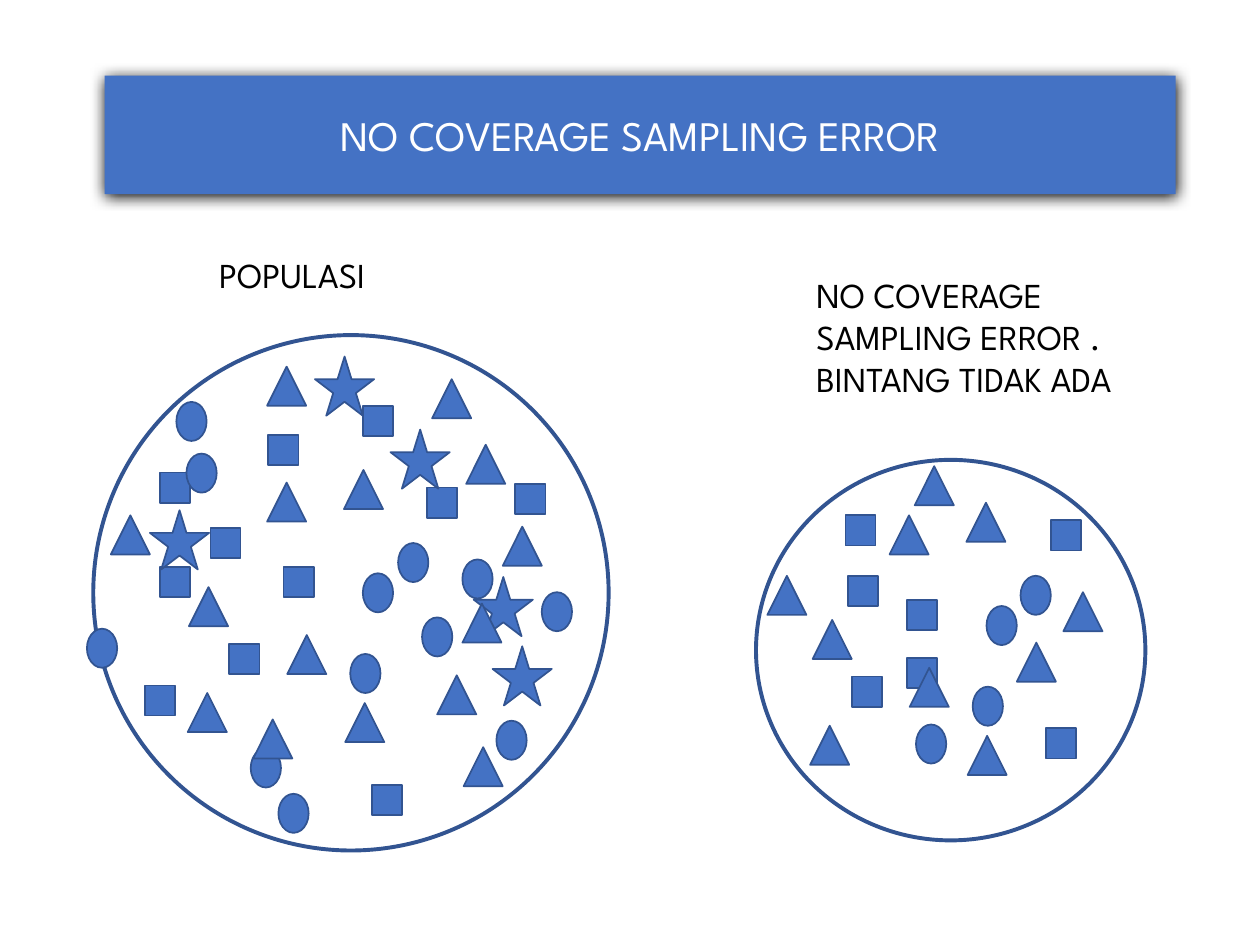
import pptx
import pptx.util
import pptx.dml.color
import pptx.enum.shapes
import pptx.enum.text
import pptx.oxml
import pptx.oxml.ns
from pptx.util import Inches

FONT = "League Spartan"
BLUE, EDGE = "4472C4", "325491"
KINDS = pptx.enum.shapes.MSO_SHAPE


def color(value):
    return pptx.dml.color.RGBColor.from_string(value)


def format_text(frame, size, value):
    for para in frame.paragraphs:
        for span in para.runs:
            span.font.name = FONT
            span.font.size = pptx.util.Pt(size)
            span.font.color.rgb = color(value)


deck = pptx.Presentation()
deck.slide_width, deck.slide_height = Inches(10), Inches(7.5)
page = deck.slides.add_slide(deck.slide_layouts[5])

# Title banner with a soft shadow
title = page.shapes.title
title.left, title.top = Inches(0.83), Inches(0.6)
title.width, title.height = Inches(8.5), Inches(0.94)
title.fill.solid()
title.fill.fore_color.rgb = color(BLUE)
title.line.fill.background()
title.text_frame.text = "NO COVERAGE SAMPLING ERROR"
title.text_frame.vertical_anchor = pptx.enum.text.MSO_ANCHOR.MIDDLE
title.text_frame.paragraphs[0].alignment = pptx.enum.text.PP_ALIGN.CENTER
format_text(title.text_frame, 24, "FFFFFF")
title.element.spPr.append(pptx.oxml.parse_xml(
    f'<a:effectLst {pptx.oxml.ns.nsdecls("a")}>'
    '<a:outerShdw blurRad="107950" dist="12700" dir="5400000" rotWithShape="0">'
    '<a:srgbClr val="000000"/></a:outerShdw></a:effectLst>'))

# Captions
captions = [
    ("POPULASI", 1.64, 1.96, 2.15, 0.44),
    ("NO COVERAGE SAMPLING ERROR . BINTANG TIDAK ADA", 6.38, 2.12, 3.09, 1.11),
]
for wording, left, top, width, height in captions:
    box = page.shapes.add_textbox(Inches(left), Inches(top), Inches(width), Inches(height))
    box.text_frame.word_wrap = True
    box.text_frame.auto_size = pptx.enum.text.MSO_AUTO_SIZE.SHAPE_TO_FIT_TEXT
    box.text_frame.text = wording
    format_text(box.text_frame, 20, "000000")

# Members of each circle: left and top by kind, from back to front
sizes = {
    KINDS.RECTANGLE: (0.24, 0.24),
    KINDS.STAR_5_POINT: (0.47, 0.47),
    KINDS.OVAL: (0.24, 0.31),
    KINDS.ISOSCELES_TRIANGLE: (0.31, 0.31),
}
sample = {
    KINDS.RECTANGLE: [
        (6.71, 4.09), (6.73, 4.57), (8.34, 4.13), (7.2, 4.76), (6.76, 5.37),
        (7.2, 5.22), (8.3, 5.78)],
    KINDS.OVAL: [(7.83, 4.81), (7.72, 5.45), (8.1, 4.57), (7.27, 5.75)],
    KINDS.ISOSCELES_TRIANGLE: [
        (8.07, 5.1), (7.67, 3.99), (7.06, 4.09), (7.22, 5.3), (7.26, 3.7),
        (6.09, 4.57), (6.45, 4.92), (6.43, 5.76), (7.68, 5.84), (8.44, 4.7)],
}
population = {
    KINDS.RECTANGLE: [
        (1.27, 4.5), (2.13, 3.45), (2.88, 3.22), (1.27, 3.75), (3.39, 3.87),
        (2.25, 4.5), (1.82, 5.11), (1.15, 5.44), (2.95, 6.23), (1.67, 4.19),
        (4.09, 3.84)],
    KINDS.STAR_5_POINT: [
        (3.76, 4.58), (3.1, 3.41), (3.91, 5.13), (1.19, 4.05), (2.5, 2.83)],
    KINDS.OVAL: [
        (2.88, 4.55), (2.78, 5.19), (3.35, 4.9), (3.16, 4.31), (1.99, 5.94),
        (3.67, 4.44), (1.48, 3.6), (0.69, 4.99), (4.3, 4.7), (2.21, 6.3),
        (3.94, 5.72), (1.4, 3.19)],
    KINDS.ISOSCELES_TRIANGLE: [
        (3.68, 5.93), (2.73, 3.73), (2.12, 3.83), (2.28, 5.04), (2.12, 2.91),
        (0.88, 4.09), (1.5, 4.66), (1.49, 5.5), (3.47, 5.36), (2.74, 5.58),
        (3.43, 3.01), (3.7, 3.53), (3.99, 4.18), (3.67, 4.79), (2.01, 5.71)],
}

# Circles with their members, one group each
for circle, members in [((6, 3.65, 3.09, 3.02), sample),
                        ((0.74, 2.66, 4.09, 4.09), population)]:
    group = page.shapes.add_group_shape()
    outline = group.shapes.add_shape(KINDS.OVAL, *map(Inches, circle))
    outline.shadow.inherit = False
    outline.fill.background()
    outline.line.color.rgb = color(EDGE)
    outline.line.width = pptx.util.Pt(2.25)
    for kind, places in members.items():
        width, height = sizes[kind]
        for left, top in places:
            member = group.shapes.add_shape(
                kind, Inches(left), Inches(top), Inches(width), Inches(height))
            member.shadow.inherit = False
            member.fill.solid()
            member.fill.fore_color.rgb = color(BLUE)
            member.line.color.rgb = color(EDGE)
            member.line.width = pptx.util.Pt(1)

deck.save("out.pptx")
